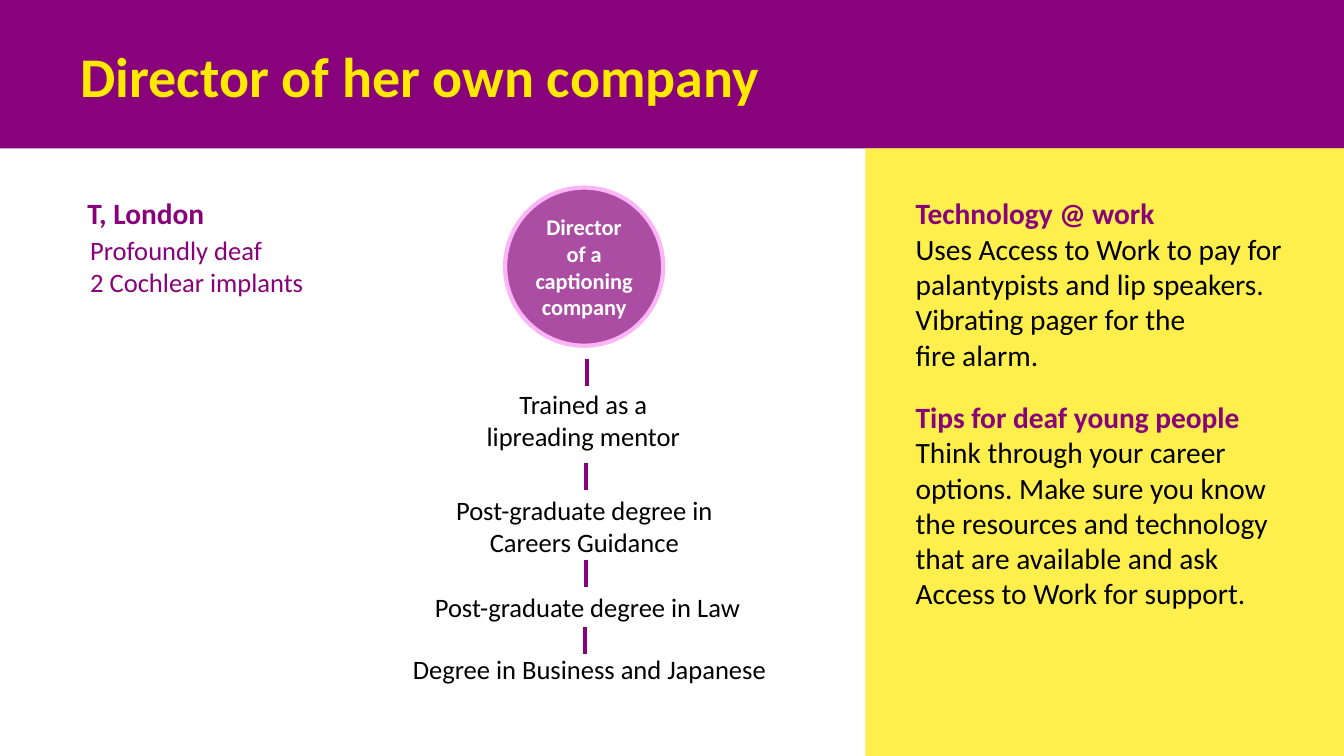
from collections import namedtuple

from lxml import etree
from pptx import Presentation
from pptx.dml.color import RGBColor
from pptx.enum.shapes import MSO_CONNECTOR as CONNECTOR, MSO_SHAPE as SHAPE
from pptx.enum.text import MSO_ANCHOR as ANCHOR, PP_ALIGN as ALIGN
from pptx.oxml.ns import qn
from pptx.util import Pt

PURPLE = RGBColor(0x87, 0x02, 0x7B)
MAUVE = RGBColor(0xAB, 0x4E, 0xA3)
PINK = RGBColor(0xFE, 0xB5, 0xF7)
YELLOW = RGBColor(0xFF, 0xE9, 0x00)
BLACK = RGBColor(0, 0, 0)
WHITE = RGBColor(0xFF, 0xFF, 0xFF)
FONT = "Calibri"
WIDTH, HEIGHT, BANNER_HEIGHT = 960.5, 540, 106
PANEL_LEFT = 618.5

Box = namedtuple("Box", "left top width height")
Step = namedtuple("Step", "text center tick_x tick_top text_top width height")

CAREER_STEPS = [
    Step("Trained as a\nlipreading mentor", 108.9, 111.8, 150.3, 167.6, 219, 53),
    Step("Post-graduate degree in Careers Guidance", 109.6, 111, 224.5, 243.2, 219, 53),
    Step("Post-graduate degree in Law", 111.8, 111, 294.3, 312.3, 396, 30),
    Step("Degree in Business and Japanese", 113.2, 110.3, 341.8, 357, 334, 30),
]
TICK_LENGTH = 19.2


def in_points(box):
    """Turn the four numbers of a box into lengths."""
    return [Pt(value) for value in box]


def style(paragraph, size, color, bold=False, align=ALIGN.LEFT):
    """Set the font and alignment of a paragraph."""
    paragraph.alignment = align
    font = paragraph.font
    font.name, font.size, font.bold = FONT, Pt(size), bold
    font.color.rgb = color


def add_shape(slide, kind, box, color):
    """Add a flat, unlined shape."""
    shape = slide.shapes.add_shape(kind, *in_points(box))
    shape.shadow.inherit = False
    shape.fill.solid()
    shape.fill.fore_color.rgb = color
    shape.line.fill.background()
    return shape


def add_text(slide, box, text, size, color, bold=False, align=ALIGN.LEFT):
    """Add a wrapping text box with one style throughout."""
    frame = slide.shapes.add_textbox(*in_points(box)).text_frame
    frame.word_wrap = True
    frame.text = text
    for paragraph in frame.paragraphs:
        style(paragraph, size, color, bold, align)
    return frame


def add_tick(slide, x, top):
    """Add a short vertical line between two career steps."""
    tick = slide.shapes.add_connector(
        CONNECTOR.STRAIGHT, Pt(x), Pt(top), Pt(x), Pt(top + TICK_LENGTH))
    tick.line.color.rgb = PURPLE
    tick.line.width = Pt(3)
    etree.SubElement(tick._element.spPr, qn("a:effectLst"))


def add_banner(slide, box):
    """Draw the banner and set the title on it."""
    banner = add_shape(slide, SHAPE.RECTANGLE, box, PURPLE)
    title = slide.shapes.title
    banner._element.addnext(title._element)
    title.left, title.top, title.width, title.height = in_points(
        (box.left + 48.2, box.top + 25.2, 650, 57))
    frame = title.text_frame
    frame.margin_left = frame.margin_right = Pt(9.4)
    frame.margin_top = frame.margin_bottom = Pt(5)
    frame.vertical_anchor = ANCHOR.MIDDLE
    frame.text = "Director of her own company"
    style(frame.paragraphs[0], 40, YELLOW, bold=True)


def add_profile(slide, box):
    """Introduce the person and her hearing."""
    add_text(slide, (box.left, box.top, box.width, 32), "T, London", 21, PURPLE, True)
    add_text(slide, (box.left + 2, box.top + 27.4, box.width - 2, 53),
             "Profoundly deaf\n2 Cochlear implants", 19, PURPLE)


def add_career(slide, box):
    """Stack the career steps below the circle of the current job."""
    circle = add_shape(slide, SHAPE.OVAL, (box.left + 53, box.top + 28, 113, 113), MAUVE)
    circle.line.color.rgb = PINK
    circle.line.width = Pt(3)
    frame = circle.text_frame
    frame.margin_left = frame.margin_right = frame.margin_top = frame.margin_bottom = 0
    frame.vertical_anchor = ANCHOR.MIDDLE
    frame.text = "Director\nof a captioning company"
    for paragraph in frame.paragraphs:
        style(paragraph, 16, WHITE, True, ALIGN.CENTER)
    for step in CAREER_STEPS:
        add_tick(slide, box.left + step.tick_x, box.top + step.tick_top)
        left = box.left + step.center - step.width / 2
        add_text(slide, (left, box.top + step.text_top, step.width, step.height),
                 step.text, 19, BLACK, align=ALIGN.CENTER)


def add_advice(slide, box):
    """Draw the side panel with its two headed texts."""
    panel = add_shape(slide, SHAPE.RECTANGLE, box, YELLOW)
    color = panel._element.spPr.find(qn("a:solidFill"))[0]
    etree.SubElement(color, qn("a:alpha"), val="70000")
    sections = [
        (30.1, 305, 135, "Technology @ work\n"
         "Uses Access to Work to pay for palantypists and lip speakers.\n"
         "Vibrating pager for the\nfire alarm."),
        (175.6, 286, 160, "Tips for deaf young people\n"
         "Think through your career options. Make sure you know the resources "
         "and technology that are available and ask Access to Work for support."),
    ]
    for top, width, height, text in sections:
        frame = add_text(slide, (box.left + 28.8, box.top + top, width, height),
                         text, 21, BLACK)
        style(frame.paragraphs[0], 21, PURPLE, bold=True)


def main():
    """Build and save the slide."""
    presentation = Presentation()
    presentation.slide_width, presentation.slide_height = Pt(WIDTH), Pt(HEIGHT)
    slide = presentation.slides.add_slide(presentation.slide_layouts[5])
    body_height = HEIGHT - BANNER_HEIGHT
    add_banner(slide, Box(0, 0, WIDTH, BANNER_HEIGHT))
    add_advice(slide, Box(PANEL_LEFT, BANNER_HEIGHT, WIDTH - PANEL_LEFT, body_height))
    add_profile(slide, Box(55.4, BANNER_HEIGHT + 30.1, 200, 80))
    add_career(slide, Box(308, BANNER_HEIGHT, 219, body_height))
    presentation.save("out.pptx")


if __name__ == "__main__":
    main()
